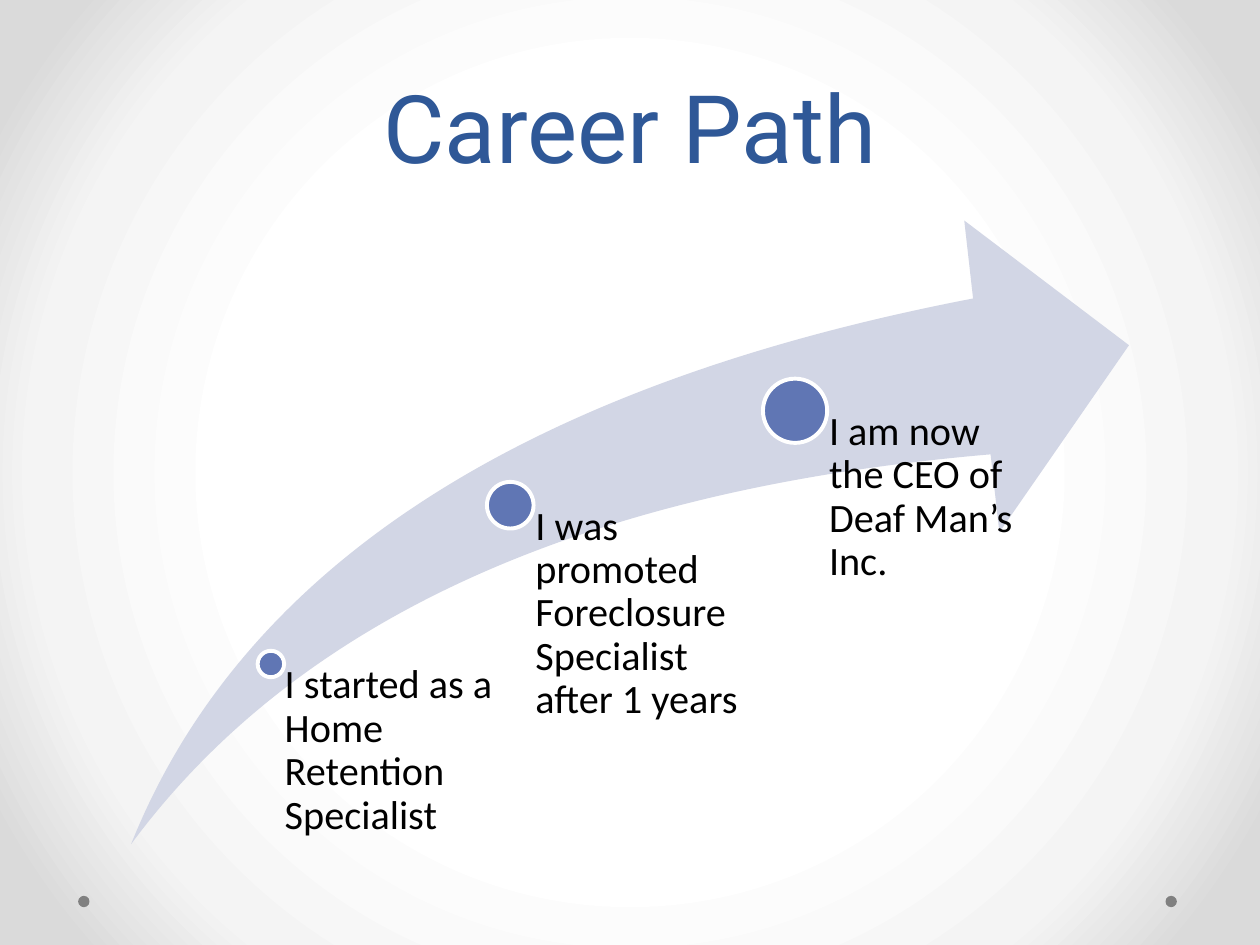
"""Build the Career Path slide: three milestones along a rising arrow."""
import lxml.etree
import pptx
import pptx.dml.color
import pptx.enum.shapes
import pptx.enum.text
import pptx.oxml
import pptx.oxml.ns
import pptx.util

Inches = pptx.util.Inches
Pt = pptx.util.Pt
RGBColor = pptx.dml.color.RGBColor
MSO_SHAPE = pptx.enum.shapes.MSO_SHAPE

TITLE_BLUE = RGBColor(0x2F, 0x58, 0x97)
ARROW_BLUE = RGBColor(0xD2, 0xD6, 0xE5)
MARKER_BLUE = RGBColor(0x60, 0x76, 0xB4)
DOT_GRAY = RGBColor(0x80, 0x80, 0x80)
WHITE = RGBColor(0xFF, 0xFF, 0xFF)
LIGHT_GRAY = RGBColor(0xF4, 0xF4, 0xF4)
EDGE_GRAY = RGBColor(0xDA, 0xDA, 0xDA)
BLACK = RGBColor(0, 0, 0)

BACKGROUND_STOPS = [(50, WHITE), (76, LIGHT_GRAY), (92, EDGE_GRAY)]
ARROW_BOTTOM = 6.7

# Center x, center y, marker diameter, text width, text inset, wording
MILESTONES = [
    (2.15, 5.27, 0.21, 1.85, 0.11, "I started as a Home Retention Specialist"),
    (4.05, 4.01, 0.37, 1.9, 0.2, "I was promoted Foreclosure Specialist after 1 years"),
    (6.31, 3.26, 0.51, 1.9, 0.27, "I am now the CEO of Deaf Man’s Inc."),
]


def set_background(slide):
    """Fill the slide background with a circular gradient."""
    fill = slide.background.fill
    fill.gradient()
    stops = "".join(
        f'<a:gs pos="{position * 1000}"><a:srgbClr val="{color}"/></a:gs>'
        for position, color in BACKGROUND_STOPS
    )
    gradient = pptx.oxml.parse_xml(
        f'<a:gradFill {pptx.oxml.ns.nsdecls("a")} rotWithShape="1">'
        f"<a:gsLst>{stops}</a:gsLst>"
        '<a:path path="circle"><a:fillToRect l="50000" t="50000" r="50000" b="50000"/></a:path>'
        "</a:gradFill>"
    )
    old_gradient = next(slide.element.iter(pptx.oxml.ns.qn("a:gradFill")))
    old_gradient.getparent().replace(old_gradient, gradient)


def add_filled_shape(slide, kind, left, top, width, height, color):
    """Add a flat preset shape without an outline."""
    shape = slide.shapes.add_shape(
        kind, Inches(left), Inches(top), Inches(width), Inches(height)
    )
    shape.shadow.inherit = False
    shape.fill.solid()
    shape.fill.fore_color.rgb = color
    shape.line.fill.background()
    return shape


def set_title(slide, text):
    """Place and format the title placeholder."""
    title = slide.shapes.title
    title.left, title.top = Inches(0.5), Inches(0.17)
    title.width, title.height = Inches(9), Inches(1.33)
    title.text_frame.text = text
    title.text_frame.vertical_anchor = pptx.enum.text.MSO_ANCHOR.BOTTOM
    paragraph = title.text_frame.paragraphs[0]
    paragraph.alignment = pptx.enum.text.PP_ALIGN.CENTER
    paragraph.line_spacing = Pt(58)
    paragraph.font.size = Pt(54)
    paragraph.font.name = "Roboto"
    paragraph.font.color.rgb = TITLE_BLUE


def add_milestone(slide, x, y, diameter, width, inset, text):
    """Add a round marker and the text that starts at its center."""
    marker = add_filled_shape(
        slide, MSO_SHAPE.OVAL, x - diameter / 2, y - diameter / 2,
        diameter, diameter, MARKER_BLUE,
    )
    marker.line.color.rgb = WHITE
    marker.line.width = Pt(2.25)

    text_box = slide.shapes.add_textbox(
        Inches(x), Inches(y), Inches(width), Inches(ARROW_BOTTOM - y)
    )
    frame = text_box.text_frame
    frame.word_wrap = True
    frame.margin_left = Inches(inset)
    frame.margin_top = frame.margin_right = frame.margin_bottom = 0
    frame.text = text
    paragraph = frame.paragraphs[0]
    paragraph.line_spacing = 0.9
    paragraph.font.size = Pt(23)
    paragraph.font.name = "Calibri"
    paragraph.font.color.rgb = BLACK


def main():
    """Create the slide and save it."""
    presentation = pptx.Presentation()
    presentation.slide_width = Inches(10)
    presentation.slide_height = Inches(7.5)
    slide = presentation.slides.add_slide(presentation.slide_layouts[5])
    set_background(slide)
    for left in (9.25, 0.62):
        add_filled_shape(slide, MSO_SHAPE.OVAL, left, 7.11, 0.09, 0.09, DOT_GRAY)
    set_title(slide, "Career Path")
    arrow = add_filled_shape(
        slide, MSO_SHAPE.SWOOSH_ARROW, 1.04, 1.75, 7.92, ARROW_BOTTOM - 1.75, ARROW_BLUE
    )
    arrow.adjustments[0] = arrow.adjustments[1] = 0.25
    for milestone in MILESTONES:
        add_milestone(slide, *milestone)
    presentation.save("out.pptx")


if __name__ == "__main__":
    main()
